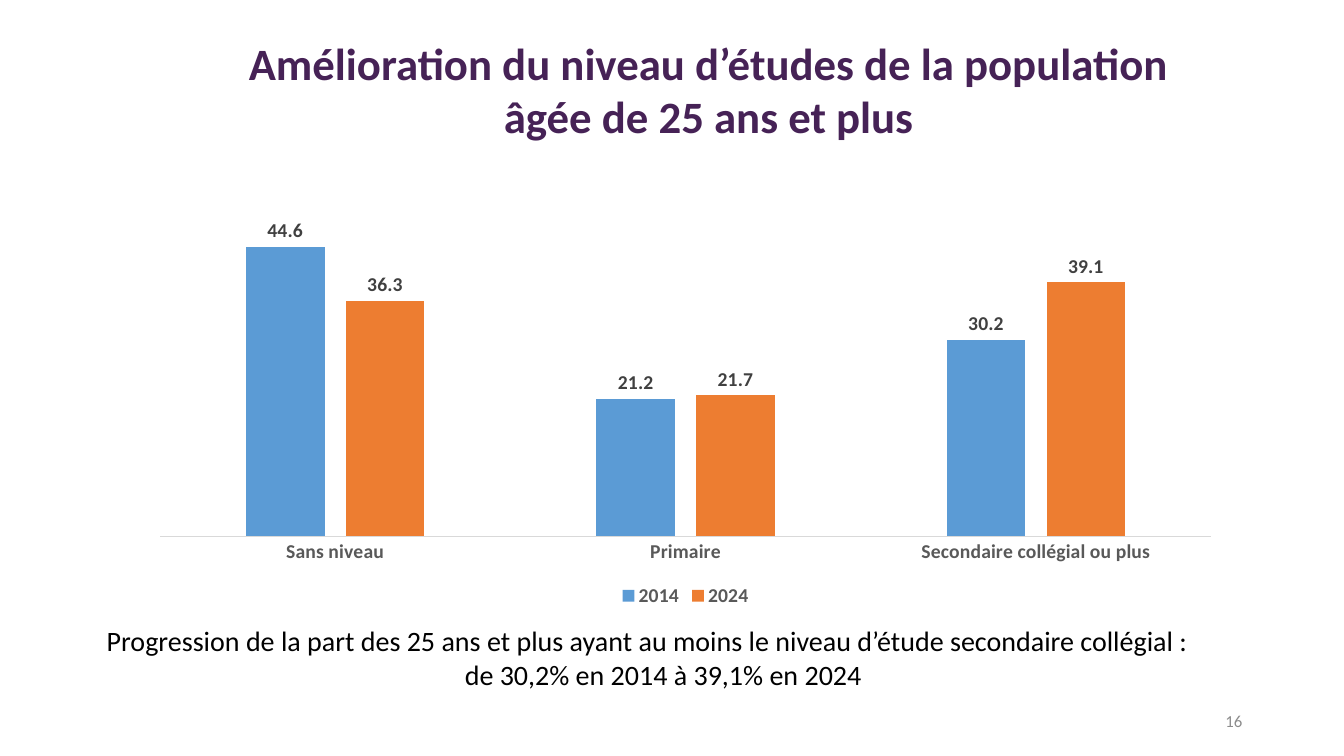
"""Build the slide on education levels of people aged 25 and over."""
from dataclasses import dataclass

from pptx import Presentation
from pptx.chart.data import CategoryChartData
from pptx.dml.color import RGBColor
from pptx.enum.chart import XL_CHART_TYPE, XL_LABEL_POSITION, XL_LEGEND_POSITION, XL_TICK_MARK
from pptx.enum.text import MSO_ANCHOR, PP_ALIGN
from pptx.util import Inches, Pt

CLUSTERED = XL_CHART_TYPE.COLUMN_CLUSTERED
OUTSIDE_END = XL_LABEL_POSITION.OUTSIDE_END
LEGEND_BOTTOM = XL_LEGEND_POSITION.BOTTOM
NO_TICK = XL_TICK_MARK.NONE
CENTER, RIGHT, JUSTIFY = PP_ALIGN.CENTER, PP_ALIGN.RIGHT, PP_ALIGN.JUSTIFY
TOP, MIDDLE = MSO_ANCHOR.TOP, MSO_ANCHOR.MIDDLE


@dataclass(frozen=True)
class Theme:
    font: str = "Calibri"
    purple: str = "462256"
    black: str = "000000"
    axis_text: str = "595959"
    label_text: str = "404040"
    axis_line: str = "D9D9D9"
    page_gray: str = "8C8C8C"
    year_colors: tuple = ("5B9BD5", "ED7D31")
    title_size: int = 32
    body_size: int = 20
    chart_size: int = 14
    page_size: int = 12


theme = Theme()


def style_font(font, size, color, bold=False):
    font.name = theme.font
    font.size = Pt(size)
    font.bold = bold
    font.color.rgb = RGBColor.from_string(color)


def add_text(lines, box, size, color, aligns, bold=False, anchor=TOP):
    frame = slide.shapes.add_textbox(*map(Inches, box)).text_frame
    frame.word_wrap = True
    frame.vertical_anchor = anchor
    frame.text = "\n".join(lines)
    for paragraph, align in zip(frame.paragraphs, aligns):
        paragraph.alignment = align
        style_font(paragraph.runs[0].font, size, color, bold)


prs = Presentation()
prs.slide_width, prs.slide_height = Inches(13.33), Inches(7.5)
slide = prs.slides.add_slide(prs.slide_layouts[6])

add_text(["Amélioration du niveau d’études de la population âgée de 25 ans et plus"],
         (2.23, 0.3, 9.6, 1.18), theme.title_size, theme.purple, [CENTER], bold=True)

add_text(["Progression de la part des 25 ans et plus ayant au moins le niveau d’étude "
          "secondaire collégial :",
          "de 30,2% en 2014 à 39,1% en 2024"],
         (0.96, 6.14, 11.24, 0.77), theme.body_size, theme.black, [JUSTIFY, CENTER])

levels = CategoryChartData(number_format="0.0")
levels.categories = ["Sans niveau", "Primaire", "Secondaire collégial ou plus"]
levels.add_series("2014", (44.6, 21.2, 30.2))
levels.add_series("2024", (36.3, 21.7, 39.1))
chart = slide.shapes.add_chart(
    CLUSTERED, Inches(1.37), Inches(2.02), Inches(10.86), Inches(4.05), levels).chart
chart.has_title = False
style_font(chart.font, theme.chart_size, theme.black, bold=True)

chart.has_legend = True
chart.legend.position = LEGEND_BOTTOM
chart.legend.include_in_layout = False
style_font(chart.legend.font, theme.chart_size, theme.axis_text, bold=True)

level_axis = chart.category_axis
level_axis.major_tick_mark = NO_TICK
level_axis.format.line.color.rgb = RGBColor.from_string(theme.axis_line)
level_axis.format.line.width = Pt(0.75)
style_font(level_axis.tick_labels.font, theme.chart_size, theme.axis_text, bold=True)

share_axis = chart.value_axis
share_axis.minimum_scale, share_axis.maximum_scale = 0, 50
share_axis.has_major_gridlines = False
share_axis.visible = False

columns = chart.plots[0]
columns.gap_width = 219
columns.overlap = -27
columns.vary_by_categories = False
for year, color in zip(columns.series, theme.year_colors):
    year.format.fill.solid()
    year.format.fill.fore_color.rgb = RGBColor.from_string(color)
    labels = year.data_labels
    labels.show_value = True
    labels.position = OUTSIDE_END
    labels.number_format = "0.0"
    labels.number_format_is_linked = False
    style_font(labels.font, theme.chart_size, theme.label_text, bold=True)

add_text(["16"], (9.42, 6.95, 3, 0.4), theme.page_size, theme.page_gray, [RIGHT], anchor=MIDDLE)

prs.save("out.pptx")
